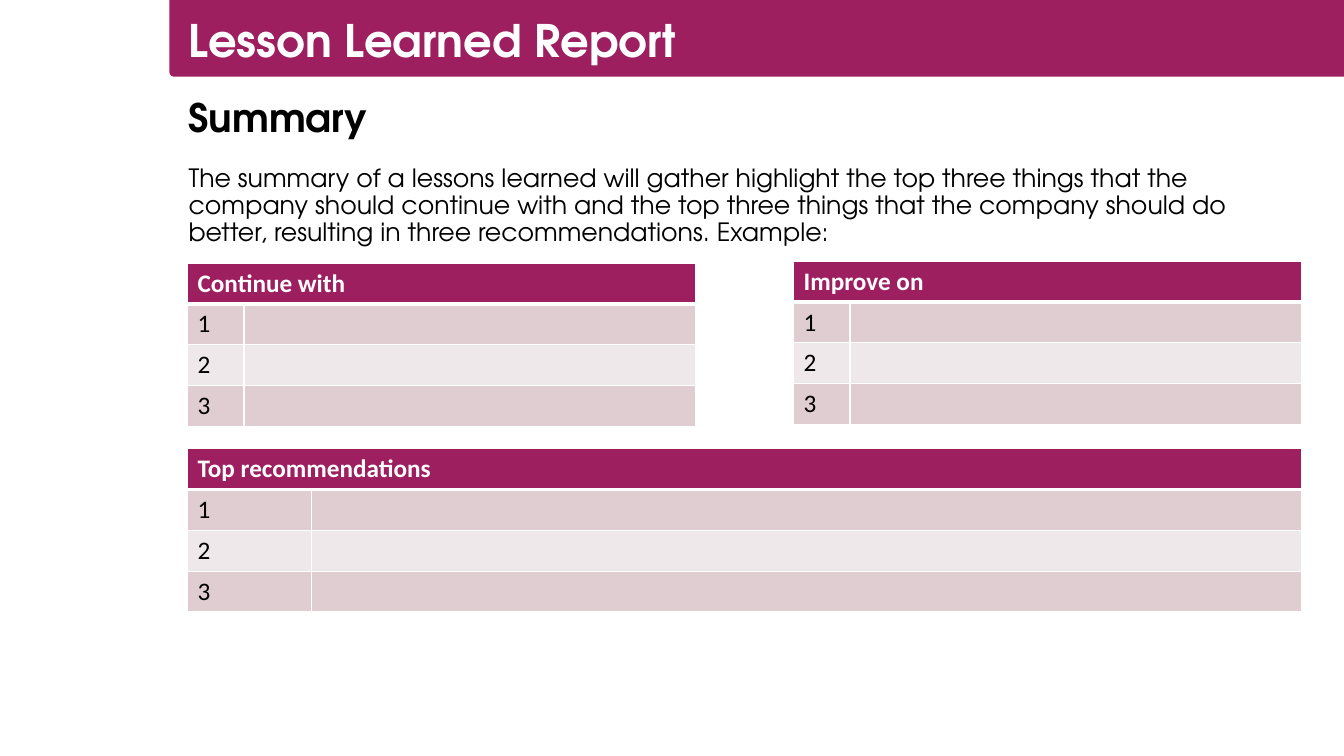
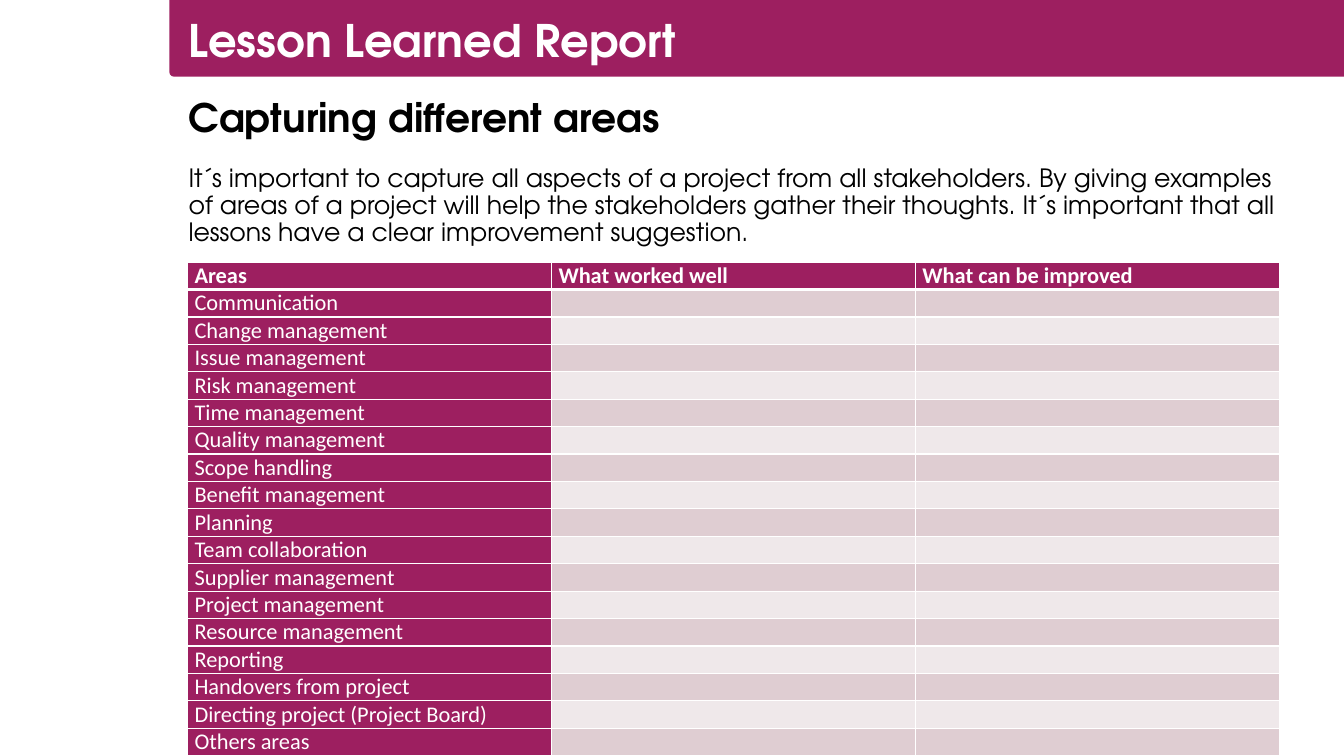
import dataclasses

import lxml.etree
import pptx
import pptx.dml.color
import pptx.enum.shapes
import pptx.enum.text
import pptx.oxml.ns
import pptx.presentation
import pptx.shapes.autoshape
import pptx.slide
import pptx.table
import pptx.text.text
import pptx.util

Inches = pptx.util.Inches

ACCENT = "9D1F60"
DARK_BAND = "DFCDD2"
LIGHT_BAND = "EFE8EA"
WHITE = "FFFFFF"
BLACK = "000000"
HEADING_FONT = "TeX Gyre Adventor"
TABLE_FONT = "Calibri"
REPORT_TITLE = "Lesson Learned Report"
TEXT_LEFT = 1.77
TABLE_LEFT = 1.86


@dataclasses.dataclass(frozen=True)
class TextStyle:
    font: str
    size: int
    colour: str
    bold: bool = False


@dataclasses.dataclass(frozen=True)
class Frame:
    left: float
    top: float
    width: float
    height: float


@dataclasses.dataclass(frozen=True)
class TableLook:
    size: int
    row_height: float
    side_inset: float
    end_inset: float
    label_fill: str | None = None
    label_colour: str = BLACK


@dataclasses.dataclass(frozen=True)
class Grid:
    left: float
    top: float
    columns: tuple[float, ...]
    headers: tuple[str, ...]
    labels: tuple[str, ...]
    look: TableLook


@dataclasses.dataclass(frozen=True)
class ReportPage:
    heading: str
    body: str
    grids: tuple[Grid, ...]


TITLE_STYLE = TextStyle(HEADING_FONT, 32, WHITE, True)
HEADING_STYLE = TextStyle(HEADING_FONT, 28, BLACK, True)
BODY_STYLE = TextStyle(HEADING_FONT, 18, BLACK)
TITLE_FRAME = Frame(TEXT_LEFT, 0.12, 11.14, 0.62)
BODY_FRAME = Frame(TEXT_LEFT, 1.59, 11.14, 1.04)
HEADING_FRAME = Frame(TEXT_LEFT, 0.93, 10.09, 0.48)
BAND_FRAME = Frame(1.68, -0.11, 11.78, 0.87)

RANKED_LOOK = TableLook(18, 0.4, 0.1, 0.05)
AREA_LOOK = TableLook(16, 0.27, 0.07, 0, ACCENT, WHITE)
RANKS = ("1", "2", "3")
HALF_COLUMNS = (0.56, 4.48)
AREAS = (
    "Communication",
    "Change management",
    "Issue management",
    "Risk management",
    "Time management",
    "Quality management",
    "Scope handling",
    "Benefit management",
    "Planning",
    "Team collaboration",
    "Supplier management",
    "Project management",
    "Resource management",
    "Reporting",
    "Handovers from project",
    "Directing project (Project Board)",
    "Others areas",
)

REPORT_PAGES = (
    ReportPage(
        "Summary",
        "The summary of a lessons learned will gather highlight the top three things "
        "that the company should continue with and the top three things that the "
        "company should do better, resulting in three recommendations. Example:",
        (
            Grid(TABLE_LEFT, 2.61, HALF_COLUMNS, ("Continue with",), RANKS, RANKED_LOOK),
            Grid(7.87, 2.59, HALF_COLUMNS, ("Improve on",), RANKS, RANKED_LOOK),
            Grid(TABLE_LEFT, 4.45, (1.23, 9.82), ("Top recommendations",), RANKS, RANKED_LOOK),
        ),
    ),
    ReportPage(
        "Capturing different areas",
        "It´s important to capture all aspects of a project from all stakeholders. "
        "By giving examples of areas of a project will help the stakeholders gather "
        "their thoughts. It´s important that all lessons have a clear improvement "
        "suggestion.",
        (
            Grid(
                TABLE_LEFT,
                2.6,
                (3.61,) * 3,
                ("Areas", "What worked well", "What can be improved"),
                AREAS,
                AREA_LOOK,
            ),
        ),
    ),
)


def colour_of(value: str) -> pptx.dml.color.RGBColor:
    return pptx.dml.color.RGBColor.from_string(value)


def add_child(parent: lxml.etree._Element, tag: str, **attributes: str) -> lxml.etree._Element:
    return lxml.etree.SubElement(parent, pptx.oxml.ns.qn(tag), attributes)


def add_span(para: pptx.text.text._Paragraph, text: str, style: TextStyle) -> None:
    span = para.add_run()
    span.text = text
    span.font.name = style.font
    span.font.size = pptx.util.Pt(style.size)
    span.font.bold = style.bold
    span.font.color.rgb = colour_of(style.colour)


def fill_placeholder(
    page: pptx.slide.Slide,
    index: int,
    frame: Frame,
    text: str,
    style: TextStyle,
    anchor: pptx.enum.text.MSO_ANCHOR = pptx.enum.text.MSO_ANCHOR.TOP,
) -> None:
    box = page.placeholders[index]
    box.left, box.top = Inches(frame.left), Inches(frame.top)
    box.width, box.height = Inches(frame.width), Inches(frame.height)
    text_frame = box.text_frame
    text_frame.word_wrap = True
    text_frame.auto_size = pptx.enum.text.MSO_AUTO_SIZE.NONE
    text_frame.vertical_anchor = anchor
    para = text_frame.paragraphs[0]
    para.alignment = pptx.enum.text.PP_ALIGN.LEFT
    para.line_spacing = 0.9
    para.space_before = pptx.util.Pt(0)
    properties = para._p.get_or_add_pPr()
    properties.set("marL", "0")
    properties.set("indent", "0")
    add_child(properties, "a:buNone")
    add_span(para, text, style)


def add_layout_band(page: pptx.slide.Slide) -> None:
    band = page.shapes.add_shape(
        pptx.enum.shapes.MSO_SHAPE.ROUNDED_RECTANGLE,
        Inches(BAND_FRAME.left),
        Inches(BAND_FRAME.top),
        Inches(BAND_FRAME.width),
        Inches(BAND_FRAME.height),
    )
    band.adjustments[0] = 0.05
    band.shadow.inherit = False
    band.fill.solid()
    band.fill.fore_color.rgb = colour_of(ACCENT)
    band.line.fill.background()
    page.slide_layout.shapes._spTree.insert(2, band._element)


def add_border(cell: pptx.table._Cell, side: str, points: int) -> None:
    border = add_child(
        cell._tc.get_or_add_tcPr(), f"a:ln{side}", w=str(pptx.util.Pt(points))
    )
    add_child(add_child(border, "a:solidFill"), "a:srgbClr", val=WHITE)


def format_cell(
    cell: pptx.table._Cell, text: str, style: TextStyle, fill: str, row: int, look: TableLook
) -> None:
    cell.margin_left = cell.margin_right = Inches(look.side_inset)
    cell.margin_top = cell.margin_bottom = Inches(look.end_inset)
    widths = {"L": 1, "R": 1, "T": 3 if row == 1 else 1, "B": 3 if row == 0 else 1}
    for side, points in widths.items():
        add_border(cell, side, points)
    cell.fill.solid()
    cell.fill.fore_color.rgb = colour_of(fill)
    para = cell.text_frame.paragraphs[0]
    if text:
        add_span(para, text, style)
    else:
        ending = add_child(para._p, "a:endParaRPr", sz=str(style.size * 100))
        add_child(ending, "a:latin", typeface=style.font)


def add_grid(page: pptx.slide.Slide, grid: Grid) -> None:
    look = grid.look
    row_count = len(grid.labels) + 1
    table = page.shapes.add_table(
        row_count,
        len(grid.columns),
        Inches(grid.left),
        Inches(grid.top),
        Inches(sum(grid.columns)),
        Inches(look.row_height * row_count),
    ).table
    for column, width in zip(table.columns, grid.columns):
        column.width = Inches(width)
    for row in table.rows:
        row.height = Inches(look.row_height)
    header_style = TextStyle(TABLE_FONT, look.size, WHITE, True)
    label_style = TextStyle(TABLE_FONT, look.size, look.label_colour)
    blanks = ("",) * (len(grid.columns) - 1)
    headers = (grid.headers + blanks)[: len(grid.columns)]
    for column, text in enumerate(headers):
        format_cell(table.cell(0, column), text, header_style, ACCENT, 0, look)
    if len(grid.headers) == 1:
        table.cell(0, 0).merge(table.cell(0, len(grid.columns) - 1))
    for row, label in enumerate(grid.labels, start=1):
        band_fill = DARK_BAND if row % 2 else LIGHT_BAND
        for column, text in enumerate((label, *blanks)):
            fill = look.label_fill if column == 0 and look.label_fill else band_fill
            format_cell(table.cell(row, column), text, label_style, fill, row, look)


def add_report_page(
    deck: pptx.presentation.Presentation, content: ReportPage
) -> pptx.slide.Slide:
    page = deck.slides.add_slide(deck.slide_layouts.get_by_name("Two Content"))
    fill_placeholder(
        page, 0, TITLE_FRAME, REPORT_TITLE, TITLE_STYLE, pptx.enum.text.MSO_ANCHOR.MIDDLE
    )
    fill_placeholder(page, 1, BODY_FRAME, content.body, BODY_STYLE)
    fill_placeholder(page, 2, HEADING_FRAME, content.heading, HEADING_STYLE)
    for grid in content.grids:
        add_grid(page, grid)
    return page


def main() -> None:
    deck = pptx.Presentation()
    deck.slide_width, deck.slide_height = Inches(13.33), Inches(7.5)
    pages = [add_report_page(deck, content) for content in REPORT_PAGES]
    add_layout_band(pages[0])
    deck.save("out.pptx")


if __name__ == "__main__":
    main()
